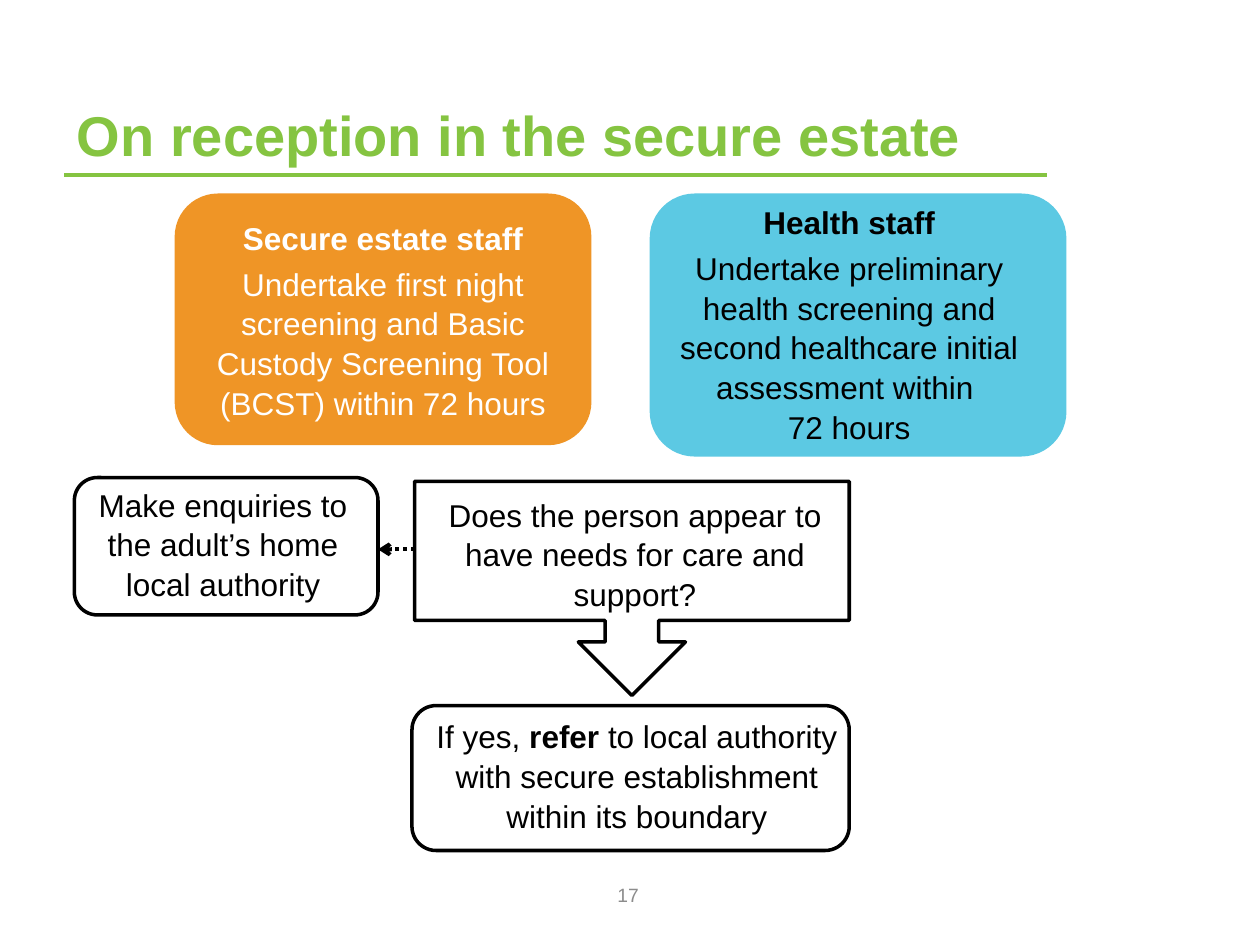
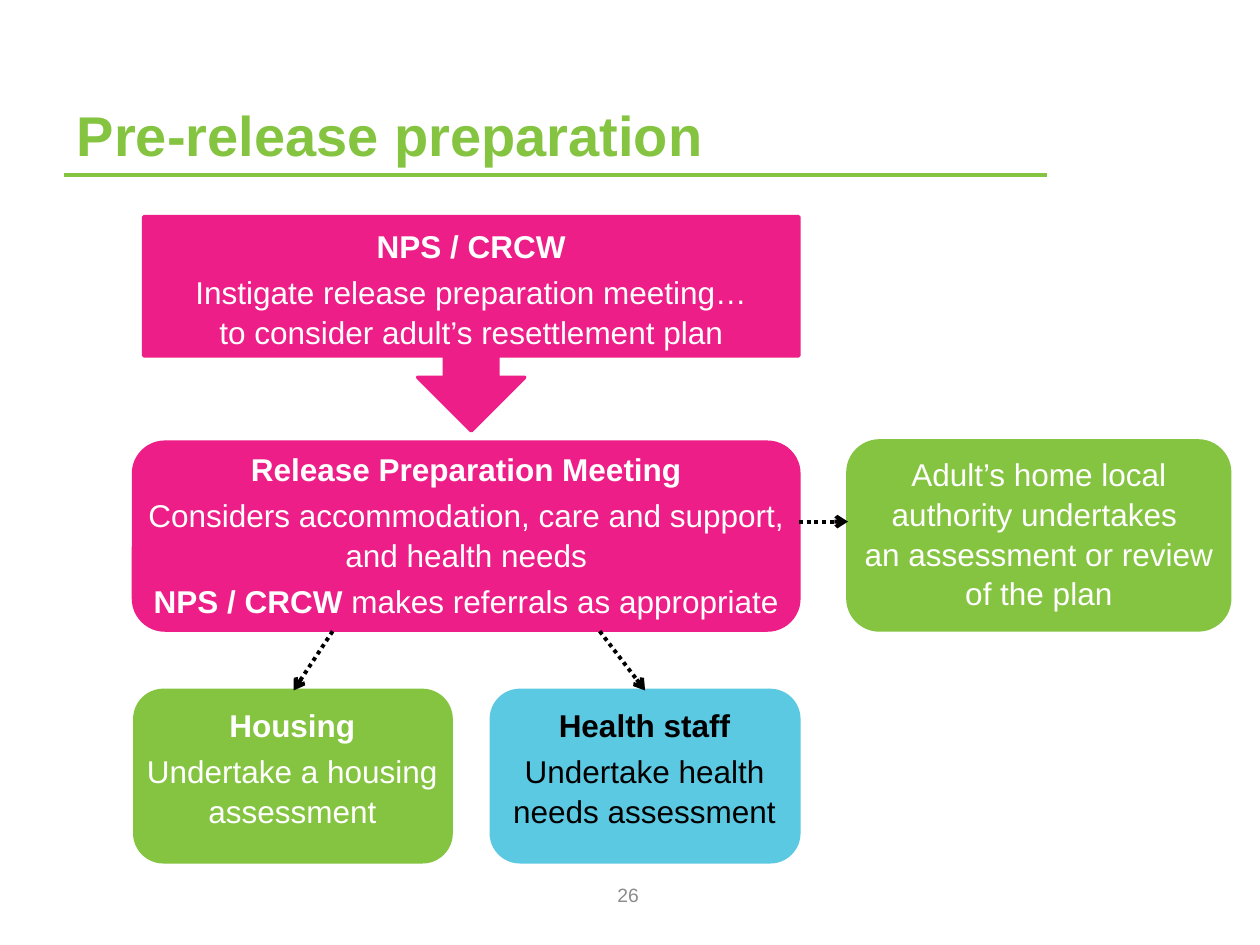
"""Build two flow-chart slides on care and support in the secure estate."""
from lxml.etree import SubElement
from pptx import Presentation
from pptx.dml.color import RGBColor
from pptx.enum.dml import MSO_LINE
from pptx.enum.shapes import MSO_CONNECTOR, MSO_SHAPE
from pptx.enum.text import MSO_ANCHOR, MSO_AUTO_SIZE, PP_ALIGN
from pptx.oxml.ns import qn
from pptx.util import Inches, Pt

GREEN = RGBColor(0x85, 0xC4, 0x41)
ORANGE = RGBColor(0xEF, 0x95, 0x26)
BLUE = RGBColor(0x5C, 0xC9, 0xE3)
PINK = RGBColor(0xED, 0x1E, 0x87)
GREY = RGBColor(0x8C, 0x8C, 0x8C)
BLACK = RGBColor(0, 0, 0)
WHITE = RGBColor(0xFF, 0xFF, 0xFF)


class Deck:
    """Holds the shared style and the current slide."""

    font = "Arial"
    body_size = 18
    line_spacing = 1.05
    paragraph_gap = Pt(3.5)

    def __init__(self):
        self.presentation = Presentation()
        self.presentation.slide_width = Inches(10)
        self.presentation.slide_height = Inches(7.5)
        self.slide = None

    def new_slide(self, heading, number):
        layout = self.presentation.slide_layouts[5]
        self.slide = self.presentation.slides.add_slide(layout)
        title = self.slide.shapes.title
        title.left, title.top = Inches(0.51), Inches(0.29)
        title.width, title.height = Inches(7.8), Inches(1.09)
        title.text_frame.text = heading
        title.text_frame.auto_size = MSO_AUTO_SIZE.NONE
        title.text_frame.vertical_anchor = MSO_ANCHOR.BOTTOM
        title.text_frame.paragraphs[0].alignment = PP_ALIGN.LEFT
        self.style(title.text_frame.paragraphs[0].runs[0], GREEN, 32, True)
        self.line((0.51, 1.39), (8.31, 1.39), GREEN, 2)
        self.text((3.82, 6.9, 2.33, 0.4), [number], GREY, 11, MSO_ANCHOR.MIDDLE)

    def style(self, run, color, size, bold=False):
        run.font.name = self.font
        run.font.size = Pt(size)
        run.font.bold = bold
        run.font.color.rgb = color

    def fill_frame(self, frame, paragraphs, color, size, anchor):
        """Fill a frame; ** toggles bold and a newline breaks the line."""
        frame.word_wrap = True
        frame.vertical_anchor = anchor
        for index, content in enumerate(paragraphs):
            paragraph = frame.add_paragraph() if index else frame.paragraphs[0]
            paragraph.alignment = PP_ALIGN.CENTER
            paragraph.line_spacing = self.line_spacing
            if index:
                paragraph.space_before = self.paragraph_gap
            for part_index, part in enumerate(content.split("**")):
                for line_index, words in enumerate(part.split("\n")):
                    if line_index:
                        paragraph.add_line_break()
                    if words:
                        run = paragraph.add_run()
                        run.text = words
                        self.style(run, color, size, part_index % 2 == 1)

    def text(self, area, paragraphs, color=BLACK, size=body_size, anchor=MSO_ANCHOR.TOP):
        box = self.slide.shapes.add_textbox(*map(Inches, area))
        self.fill_frame(box.text_frame, paragraphs, color, size, anchor)

    def box(self, area, fill=None, kind=MSO_SHAPE.ROUNDED_RECTANGLE):
        shape = self.slide.shapes.add_shape(kind, *map(Inches, area))
        shape.shadow.inherit = False
        if fill is None:
            shape.fill.background()
        else:
            shape.fill.solid()
            shape.fill.fore_color.rgb = fill
        shape.line.color.rgb = BLACK if fill is None else fill
        shape.line.width = Pt(2)
        return shape

    def callout(self, area, fill=None):
        return self.box(area, fill, MSO_SHAPE.DOWN_ARROW_CALLOUT)

    def line(self, start, end, color, width):
        connector = self.slide.shapes.add_connector(
            MSO_CONNECTOR.STRAIGHT, *map(Inches, (*start, *end)))
        connector.line.color.rgb = color
        connector.line.width = Pt(width)
        SubElement(connector._element.spPr, qn("a:effectLst"))
        return connector

    def arrow(self, start, end):
        connector = self.line(start, end, BLACK, 2.25)
        connector.line.dash_style = MSO_LINE.ROUND_DOT
        outline = connector._element.spPr.find(qn("a:ln"))
        SubElement(outline, qn("a:tailEnd"), type="arrow")


def add_reception(deck):
    deck.new_slide("On reception in the secure estate", "17")
    secure_staff = deck.box((1.4, 1.55, 3.28, 1.97), ORANGE)
    deck.fill_frame(secure_staff.text_frame, [
        "**Secure estate staff**",
        "Undertake first night screening and Basic Custody Screening Tool "
        "(BCST) within 72 hours"], WHITE, deck.body_size, MSO_ANCHOR.MIDDLE)
    deck.box((5.17, 1.55, 3.28, 2.06), BLUE)
    deck.text((5.16, 1.55, 3.16, 2.27), [
        "**Health staff**",
        "Undertake preliminary health screening and second healthcare initial "
        "assessment within \n72 hours"])
    deck.callout((3.29, 3.82, 3.45, 1.7))
    deck.text((3.34, 3.87, 3.4, 1.04),
              ["Does the person appear to have needs for care and support?"])
    deck.box((3.27, 5.6, 3.47, 1.15))
    deck.text((3.31, 5.63, 3.49, 1.31), [
        "If yes, **refer** to local authority with secure establishment "
        "within its boundary"])
    deck.box((0.59, 3.79, 2.41, 1.09))
    deck.text((0.59, 3.79, 2.36, 1.04),
              ["Make enquiries to the adult’s home local authority"])
    deck.arrow((3.29, 4.36), (3, 4.36))


def add_release(deck):
    deck.new_slide("Pre-release preparation", "26")
    deck.callout((1.14, 1.72, 5.2, 1.7), PINK)
    deck.text((1.14, 1.74, 5.2, 1.09), [
        "**NPS / CRCW**",
        "Instigate release preparation meeting…\n"
        "to consider adult’s resettlement plan"], WHITE)
    deck.box((1.06, 3.51, 5.28, 1.49), PINK)
    deck.text((1.06, 3.51, 5.28, 1.41), [
        "**Release Preparation Meeting**",
        "Considers accommodation, care and support, and health needs",
        "**NPS / CRCW **makes referrals as appropriate"], WHITE)
    deck.box((3.9, 5.48, 2.44, 1.36), BLUE)
    deck.text((3.89, 5.54, 2.45, 1.06),
              ["**Health staff**", "Undertake health needs assessment"])
    deck.box((1.07, 5.48, 2.51, 1.36), GREEN)
    deck.text((1.06, 5.54, 2.52, 1.06),
              ["**Housing**", "Undertake a housing assessment"], WHITE)
    deck.box((6.73, 3.5, 3.03, 1.5), GREEN)
    deck.text((6.73, 3.55, 3.03, 1.35), [
        "Adult’s home local authority undertakes \n"
        "an assessment or review of the plan"], WHITE)
    deck.arrow((2.64, 5.01), (2.33, 5.48))
    deck.arrow((4.76, 5.01), (5.12, 5.48))
    deck.arrow((6.34, 4.14), (6.73, 4.14))


def main():
    deck = Deck()
    add_reception(deck)
    add_release(deck)
    deck.presentation.save("out.pptx")


if __name__ == "__main__":
    main()
